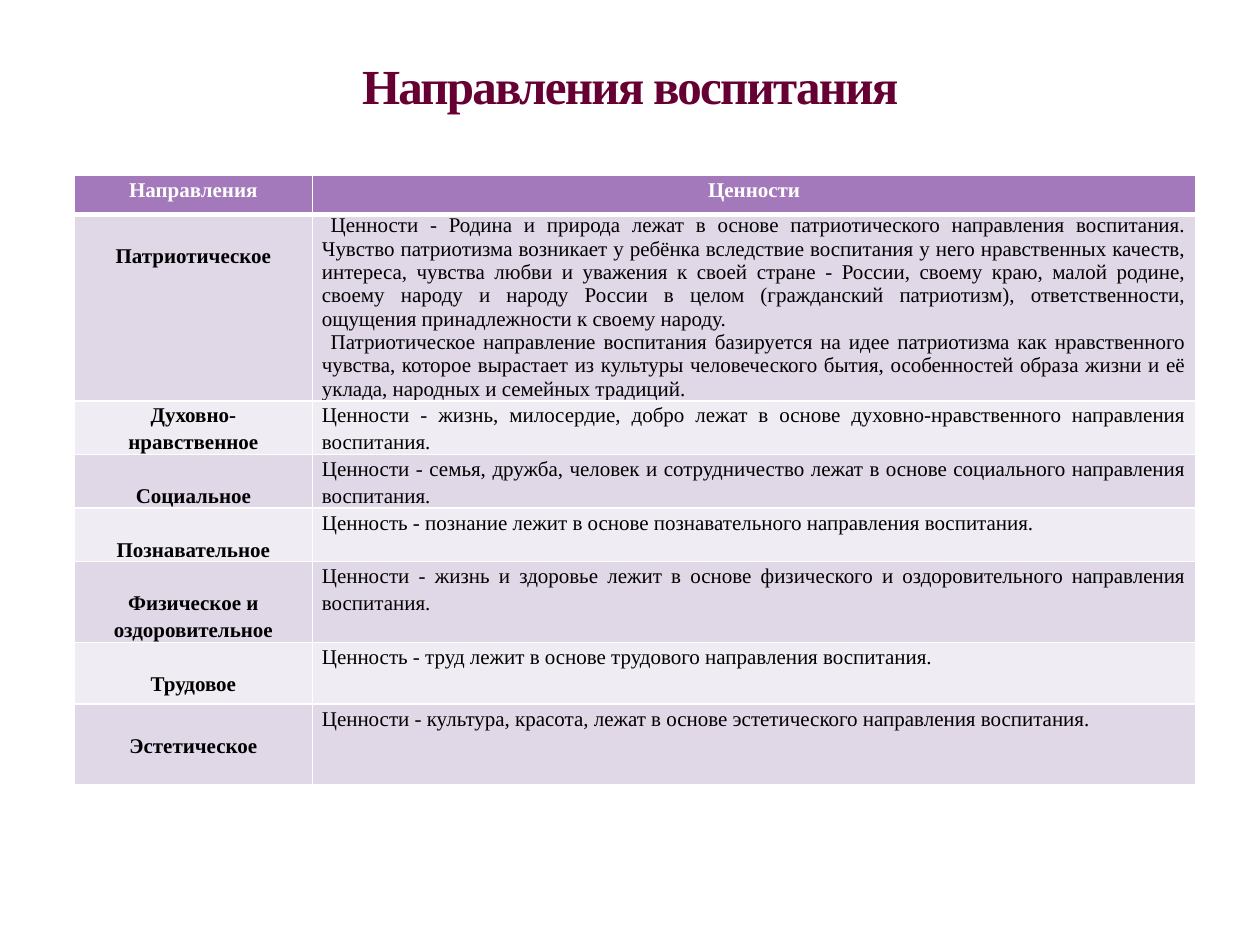
import pptx
import pptx.util
import pptx.dml.color
import pptx.enum.text
import pptx.oxml
import pptx.oxml.ns

Pt = pptx.util.Pt
RGB = pptx.dml.color.RGBColor
ALIGN = pptx.enum.text.PP_ALIGN
ANCHOR = pptx.enum.text.MSO_ANCHOR

WINE = RGB(0x66, 0x00, 0x33)
MIST = RGB(0xB1, 0xAB, 0xB8)
PLUM = RGB(0xA3, 0x79, 0xBB)
LILAC = RGB(0xE0, 0xD7, 0xE7)
PALE = RGB(0xF0, 0xEC, 0xF3)
WHITE = RGB(0xFF, 0xFF, 0xFF)
BLACK = RGB(0x00, 0x00, 0x00)

COLS, ROWS = 100, 75
UNIT = pptx.util.Inches(0.1)
LINE = 2.13  # grid rows taken by one line of table text

HEAD = ("Направления", "Ценности")
# name, values, row height, lines left free above the name
AIMS = [
    ("Патриотическое",
     "Ценности - Родина и природа лежат в основе патриотического направления "
     "воспитания. Чувство патриотизма возникает у ребёнка вследствие воспитания "
     "у него нравственных качеств, интереса, чувства любви и уважения к своей "
     "стране - России, своему краю, малой родине, своему народу и народу России "
     "в целом (гражданский патриотизм), ответственности, ощущения принадлежности "
     "к своему народу.\n"
     "Патриотическое направление воспитания базируется на идее патриотизма как "
     "нравственного чувства, которое вырастает из культуры человеческого бытия, "
     "особенностей образа жизни и её уклада, народных и семейных традиций.",
     14.7, 1),
    ("Духовно-\nнравственное",
     "Ценности - жизнь, милосердие, добро лежат в основе духовно-нравственного "
     "направления воспитания.", 4.25, 0),
    ("Социальное",
     "Ценности - семья, дружба, человек и сотрудничество лежат в основе "
     "социального направления воспитания.", 4.25, 1),
    ("Познавательное",
     "Ценность - познание лежит в основе познавательного направления "
     "воспитания.", 4.25, 1),
    ("Физическое и оздоровительное",
     "Ценности - жизнь и здоровье лежит в основе физического и оздоровительного "
     "направления воспитания.", 6.4, 1),
    ("Трудовое",
     "Ценность - труд лежит в основе трудового направления воспитания.", 4.9, 1),
    ("Эстетическое",
     "Ценности - культура, красота, лежат в основе эстетического направления "
     "воспитания.", 6.4, 1),
]


def grid(n):
    return round(n * UNIT)


def write(frame, text, size=12, color=BLACK, bold=False, align=ALIGN.CENTER,
          gap=1.15, indent=0):
    frame.word_wrap = True
    frame.text = text
    for par in frame.paragraphs:
        par.alignment = align
        par.line_spacing = gap
        if indent:
            par._p.get_or_add_pPr().set("indent", str(grid(indent)))
        for run in par.runs:
            font = run.font
            font.name, font.size, font.bold = "Times New Roman", Pt(size), bold
            font.color.rgb = color


def edge(cell, side, width):
    cell._tc.get_or_add_tcPr().append(pptx.oxml.parse_xml(
        f'<a:ln{side} {pptx.oxml.ns.nsdecls("a")} w="{Pt(width)}"><a:solidFill>'
        f'<a:srgbClr val="{WHITE}"/></a:solidFill></a:ln{side}>'))


class Deck:
    def __init__(self):
        self.prs = pptx.Presentation()
        self.prs.slide_width, self.prs.slide_height = grid(COLS), grid(ROWS)
        self.slide = self.prs.slides.add_slide(self.prs.slide_layouts[5])

    def title(self, text, x, y, w, h):
        box = self.slide.shapes.title
        box.left, box.top, box.width, box.height = map(grid, (x, y, w, h))
        frame = box.text_frame
        frame.vertical_anchor = ANCHOR.BOTTOM
        write(frame, text, size=28, color=WINE, bold=True, gap=1.0)
        props = frame.paragraphs[0].runs[0].font._element
        props.set("spc", "-100")
        props.insert(0, pptx.oxml.parse_xml(
            f'<a:ln {pptx.oxml.ns.nsdecls("a")} w="{Pt(0.25)}"><a:solidFill>'
            f'<a:srgbClr val="{MIST}"><a:alpha val="25000"/></a:srgbClr>'
            '</a:solidFill></a:ln>'))

    def table(self, x, y, widths, heights):
        table = self.slide.shapes.add_table(
            len(heights), len(widths), grid(x), grid(y),
            grid(sum(widths)), grid(sum(heights))).table
        for col, w in zip(table.columns, widths):
            col.width = grid(w)
        for row, h in zip(table.rows, heights):
            row.height = grid(h)
        return table

    def cell(self, cell, text, fill, top=0, under=1, over=1, **form):
        cell.margin_left = cell.margin_right = grid(0.75)
        cell.margin_top, cell.margin_bottom = grid(top), 0
        for side, width in zip("LRTB", (1, 1, over, under)):
            edge(cell, side, width)
        cell.fill.solid()
        cell.fill.fore_color.rgb = fill
        write(cell.text_frame, text, **form)


def main():
    deck = Deck()
    deck.title("Направления воспитания", 0, 2.9, COLS, 6.7)
    table = deck.table(5.9, 13.9, (18.9, 70.1), [3.1] + [aim[2] for aim in AIMS])
    for col, text in enumerate(HEAD):
        deck.cell(table.cell(0, col), text, PLUM, under=3, color=WHITE, bold=True)
    for row, (name, text, _, free) in enumerate(AIMS, 1):
        first = row == 1
        fill = LILAC if row % 2 else PALE
        over = 3 if first else 1
        deck.cell(table.cell(row, 0), name, fill, top=free * LINE, over=over, bold=True)
        deck.cell(table.cell(row, 1), text, fill, over=over, align=ALIGN.JUSTIFY,
                  gap=1.0 if first else 1.15, indent=0.7 if first else 0)
    deck.prs.save("out.pptx")


if __name__ == "__main__":
    main()
